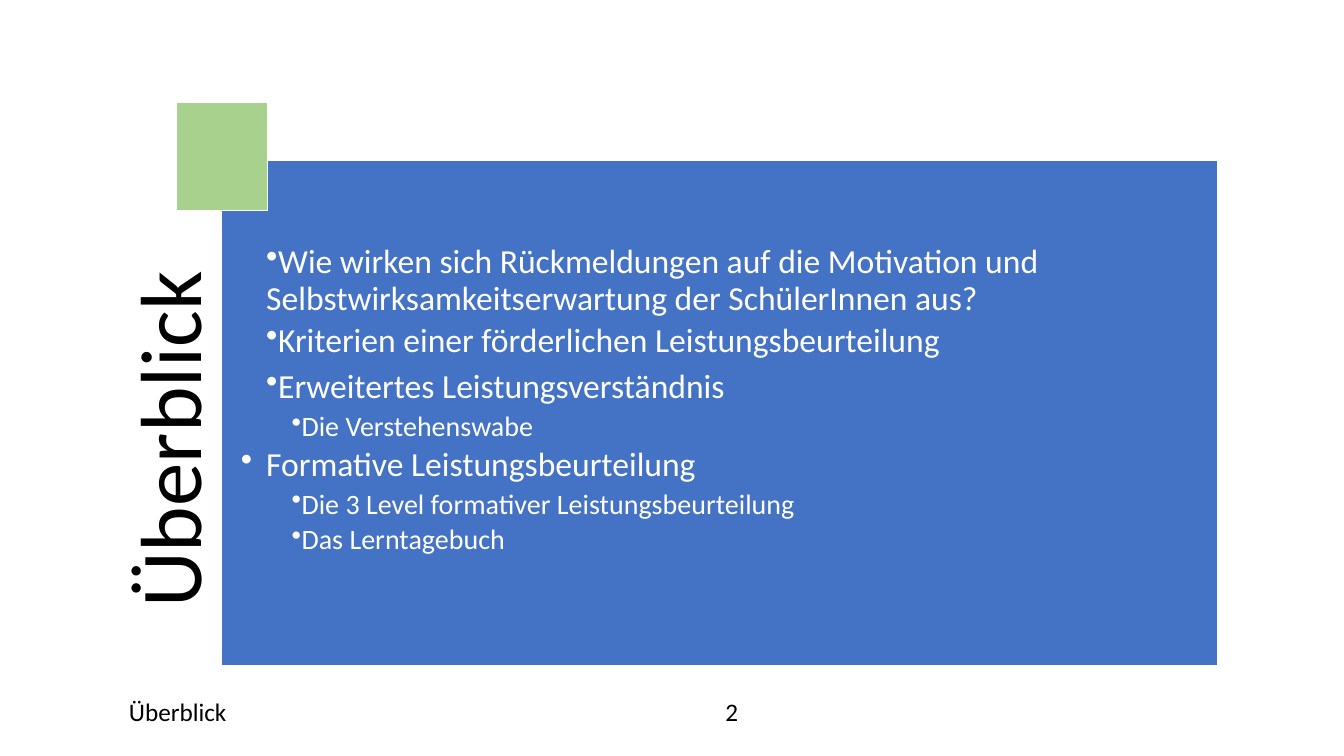
from pptx import Presentation
from pptx import util as u
from pptx.dml.color import RGBColor
from pptx.enum import shapes, text
from pptx.oxml import parse_xml
from pptx.oxml.ns import nsdecls

BLACK = RGBColor(0x00, 0x00, 0x00)
WHITE = RGBColor(0xFF, 0xFF, 0xFF)
BLUE = RGBColor(0x44, 0x72, 0xC4)
GREEN = RGBColor(0xA9, 0xD1, 0x8E)

TOPICS = [
    ("Wie wirken sich Rückmeldungen auf die Motivation und "
     "Selbstwirksamkeitserwartung der SchülerInnen aus?", 0, 0, 0),
    ("Kriterien einer förderlichen Leistungsbeurteilung", 0, 0, 0),
    ("Erweitertes Leistungsverständnis", 0, 0, 3),
    ("Die Verstehenswabe", 1, 0, 0),
    ("Formative Leistungsbeurteilung", 0, -0.64, 0),
    ("Die 3 Level formativer Leistungsbeurteilung", 1, 0, 0),
    ("Das Lerntagebuch", 1, 0, 0),
]


class SlideBuilder:
    font = "Calibri"

    def __init__(self, slide):
        self.slide = slide

    def style(self, paragraph, size, color):
        for run in paragraph.runs:
            run.font.name = self.font
            run.font.size = u.Pt(size)
            run.font.color.rgb = color

    def rectangle(self, box, fill):
        shape = self.slide.shapes.add_shape(
            shapes.MSO_SHAPE.RECTANGLE, *map(u.Cm, box))
        shape.shadow.inherit = False
        shape.fill.solid()
        shape.fill.fore_color.rgb = fill
        shape.line.color.rgb = WHITE
        shape.line.width = u.Pt(1)
        return shape

    def label(self, content, box, size, alignment):
        shape = self.slide.shapes.add_textbox(*map(u.Cm, box))
        frame = shape.text_frame
        frame.word_wrap = True
        frame.text = content
        paragraph = frame.paragraphs[0]
        paragraph.alignment = alignment
        self.style(paragraph, size, BLACK)
        return shape

    def vertical_title(self, content, box):
        shape = self.label(content, box, 62, text.PP_ALIGN.RIGHT)
        shape.rotation = 270
        frame = shape.text_frame
        frame.margin_left = frame.margin_top = frame.margin_bottom = 0
        frame.margin_right = u.Cm(2.13)
        frame.paragraphs[0].line_spacing = 0.9

    def bullets(self, shape, items):
        frame = shape.text_frame
        frame.word_wrap = True
        frame.vertical_anchor = text.MSO_ANCHOR.TOP
        frame.margin_left = frame.margin_right = frame.margin_bottom = u.Cm(0.48)
        frame.margin_top = u.Cm(2.13)
        frame.text = "\n".join(item[0] for item in items)
        for paragraph, (_, level, indent, before) in zip(frame.paragraphs, items):
            size = 24 - 4 * level
            properties = paragraph._p.get_or_add_pPr()
            properties.set("marL", str(u.Cm(0.64 * (level + 1))))
            properties.set("indent", str(u.Cm(indent)))
            properties.append(parse_xml(
                f'<a:buChar {nsdecls("a")} char="•"/>'))
            paragraph.level = level + 1
            paragraph.alignment = text.PP_ALIGN.LEFT
            paragraph.line_spacing = 0.9
            paragraph.space_before = u.Pt(before)
            paragraph.space_after = u.Pt(0.18 * size)
            self.style(paragraph, size, WHITE)


def main():
    presentation = Presentation()
    presentation.slide_width = u.Cm(33.87)
    presentation.slide_height = u.Cm(19.05)
    builder = SlideBuilder(
        presentation.slides.add_slide(presentation.slide_layouts[6]))

    builder.vertical_title("Überblick", (-1.3, 9.19, 11.38, 2.41))
    panel = builder.rectangle((5.59, 4.04, 25.1, 12.73), BLUE)
    builder.bullets(panel, TOPICS)
    builder.rectangle((4.45, 2.57, 2.29, 2.74), GREEN)
    builder.label("Überblick", (3, 17.42, 11.43, 1.02), 18, text.PP_ALIGN.LEFT)
    builder.label("2", (14.63, 17.42, 7.62, 1.02), 18, text.PP_ALIGN.CENTER)

    presentation.save("out.pptx")


if __name__ == "__main__":
    main()
